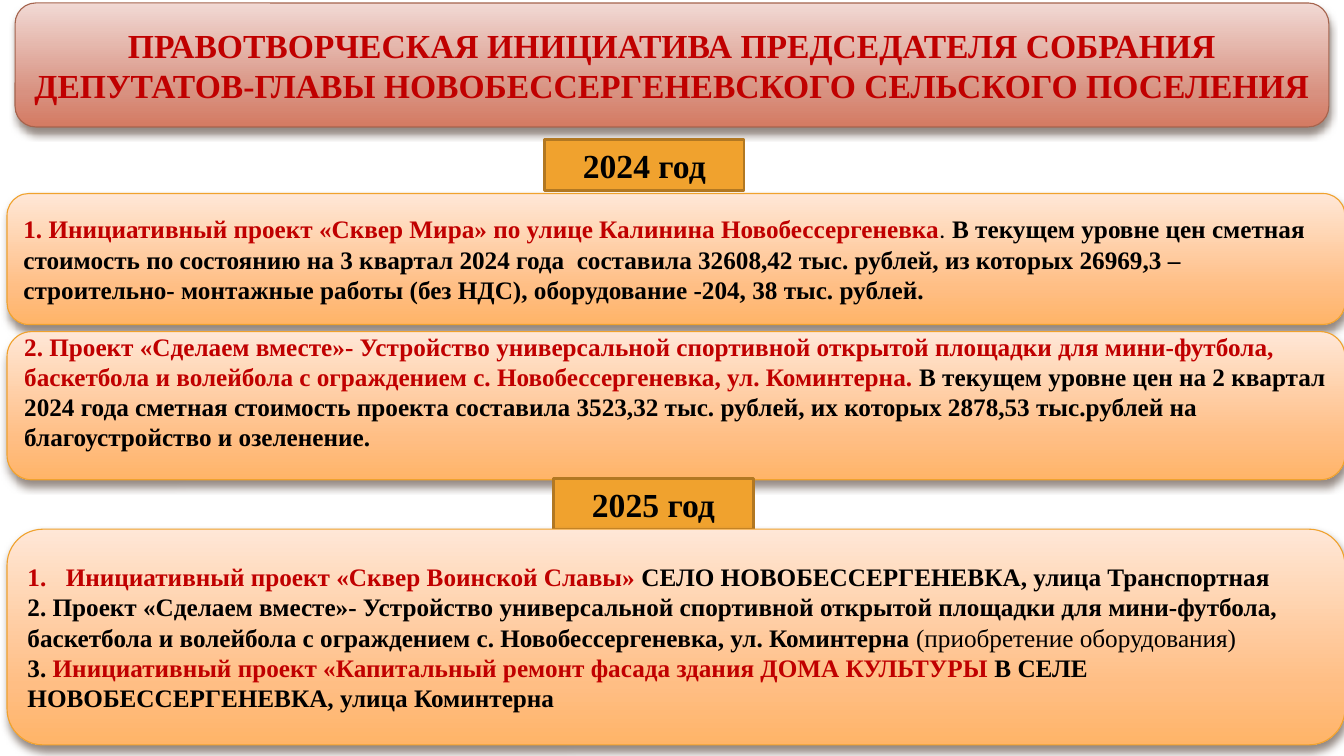
from copy import deepcopy
from dataclasses import dataclass

from lxml.etree import SubElement
from pptx import Presentation
from pptx.dml.color import RGBColor
from pptx.enum.shapes import MSO_SHAPE as Shape
from pptx.enum.text import MSO_ANCHOR as Anchor, PP_ALIGN as Align
from pptx.oxml.ns import qn
from pptx.util import Inches, Pt


@dataclass(frozen=True)
class Theme:
    red: str = "C00000"
    black: str = "000000"
    amber: str = "F0A22E"
    amber_edge: str = "B27822"
    rose_edge: str = "A5644E"
    shadow: str = "4E3B30"
    rose: tuple = ("F1D9D4", "D89180", "D47A62")
    peach: tuple = ("FFE7D7", "FFBE84", "FFB468")
    stops: tuple = (0, 0.72, 1)
    font: str = "Times New Roman"
    light_font: str = "Roboto"
    heading: int = 24
    body: int = 18


theme = Theme()


def add_panel(slide, kind, place, edge, edge_width, colors):
    """Add a shape with a plain fill, or a gradient and a soft shadow."""
    shape = slide.shapes.add_shape(kind, *(Inches(value) for value in place))
    shape.shadow.inherit = False
    shape.line.color.rgb = RGBColor.from_string(edge)
    shape.line.width = Pt(edge_width)
    shape.text_frame.word_wrap = True
    shape.text_frame.vertical_anchor = Anchor.MIDDLE
    if isinstance(colors, str):
        shape.fill.solid()
        shape.fill.fore_color.rgb = RGBColor.from_string(colors)
        return shape

    shape.fill.gradient()
    shape.fill.gradient_angle = 270
    properties = shape._element.spPr
    stop_list = properties.find(".//" + qn("a:gsLst"))
    stop_list.append(deepcopy(stop_list[0]))
    for stop, color, position in zip(shape.fill.gradient_stops, colors, theme.stops):
        stop.color.rgb = RGBColor.from_string(color)
        stop.position = position

    shadow = SubElement(properties.find(qn("a:effectLst")), qn("a:outerShdw"),
                        blurRad=str(Pt(6)), dist=str(Pt(4)), dir="5400000",
                        algn="ctr", rotWithShape="0")
    color = SubElement(shadow, qn("a:srgbClr"), val=theme.shadow)
    SubElement(color, qn("a:alpha"), val="60000")
    return shape


def write_text(shape, paragraphs, size, align):
    """Fill a shape with paragraphs of (text, color, bold, font) runs."""
    frame = shape.text_frame
    for index, runs in enumerate(paragraphs):
        paragraph = frame.add_paragraph() if index else frame.paragraphs[0]
        paragraph.alignment = align
        for text, color, bold, font in runs:
            run = paragraph.add_run()
            run.text = text
            run.font.name = font
            run.font.size = Pt(size)
            run.font.bold = bold
            run.font.color.rgb = RGBColor.from_string(color)


presentation = Presentation()
presentation.slide_width = Inches(13.33)
presentation.slide_height = Inches(7.5)
slide = presentation.slides.add_slide(presentation.slide_layouts[6])

# Run styles
red = (theme.red, True, theme.font)
black = (theme.black, True, theme.font)
plain = (theme.black, False, theme.font)
light = (theme.black, False, theme.light_font)

# Title banner
banner = add_panel(slide, Shape.ROUNDED_RECTANGLE, (0.15, 0.03, 13.03, 1.23),
                   theme.rose_edge, 0.79, theme.rose)
title = ("ПРАВОТВОРЧЕСКАЯ ИНИЦИАТИВА ПРЕДСЕДАТЕЛЯ СОБРАНИЯ "
         "ДЕПУТАТОВ-ГЛАВЫ НОВОБЕССЕРГЕНЕВСКОГО СЕЛЬСКОГО ПОСЕЛЕНИЯ")
write_text(banner, [[(title, *red)]], theme.heading, Align.CENTER)

# Year tags, partly covered by the project panels
for year, left, top, height in [("2024 год", 5.4, 1.38, 0.51),
                                ("2025 год", 5.49, 4.75, 0.5)]:
    tag = add_panel(slide, Shape.RECTANGLE, (left, top, 1.98, height),
                    theme.amber_edge, 2, theme.amber)
    write_text(tag, [[(year, *black)]], theme.heading, Align.CENTER)

# Project texts
square_2024 = [[
    ("1. Инициативный проект «Сквер Мира» по улице Калинина Новобессергеневка", *red),
    (". ", *light),
    ("В текущем уровне цен сметная стоимость по состоянию на 3 квартал 2024 года  "
     "составила 32608,42 тыс. рублей, из которых 26969,3 – строительно- монтажные "
     "работы (без НДС), оборудование -204, 38 тыс. рублей.", *black),
]]
sports_2024 = [[
    ("2. Проект «Сделаем вместе»- Устройство универсальной спортивной открытой "
     "площадки для мини-футбола, баскетбола и волейбола с ограждением "
     "с. Новобессергеневка, ул. Коминтерна. ", *red),
    ("В текущем уровне цен на 2 квартал 2024 года сметная стоимость проекта "
     "составила 3523,32 тыс. рублей, их которых 2878,53 тыс.рублей на "
     "благоустройство и озеленение.", *black),
]]
projects_2025 = [
    [("Инициативный проект «Сквер Воинской Славы» ", *red),
     ("СЕЛО НОВОБЕССЕРГЕНЕВКА, улица Транспортная", *black)],
    [("2. Проект «Сделаем вместе»- Устройство универсальной спортивной открытой "
      "площадки для мини-футбола, баскетбола и волейбола с ограждением "
      "с. Новобессергеневка, ул. Коминтерна ", *black),
     ("(приобретение оборудования)", *plain)],
    [("3. ", *black),
     ("Инициативный проект «Капитальный ремонт фасада здания ДОМА КУЛЬТУРЫ ", *red),
     ("В СЕЛЕ НОВОБЕССЕРГЕНЕВКА, улица Коминтерна", *black)],
]

# Project panels: top, height, bottom inset, text
panels = []
for top, height, inset, paragraphs in [(1.92, 1.3, 0.05, square_2024),
                                       (3.29, 1.47, 0.33, sports_2024),
                                       (5.25, 2.14, 0.05, projects_2025)]:
    panel = add_panel(slide, Shape.ROUNDED_RECTANGLE, (0.07, top, 13.27, height),
                      theme.amber, 0.79, theme.peach)
    panel.text_frame.margin_bottom = Inches(inset)
    write_text(panel, paragraphs, theme.body, Align.LEFT)
    panels.append(panel)

# The 2025 tag lies above the second panel and below the third
panels[1]._element.addnext(tag._element)

# Automatic number of the first 2025 project
numbered = panels[2].text_frame.paragraphs[0]._p.get_or_add_pPr()
numbered.set("marL", str(Inches(0.38)))
numbered.set("indent", str(Inches(-0.38)))
SubElement(numbered, qn("a:buAutoNum"), type="arabicPeriod")

presentation.save("out.pptx")
